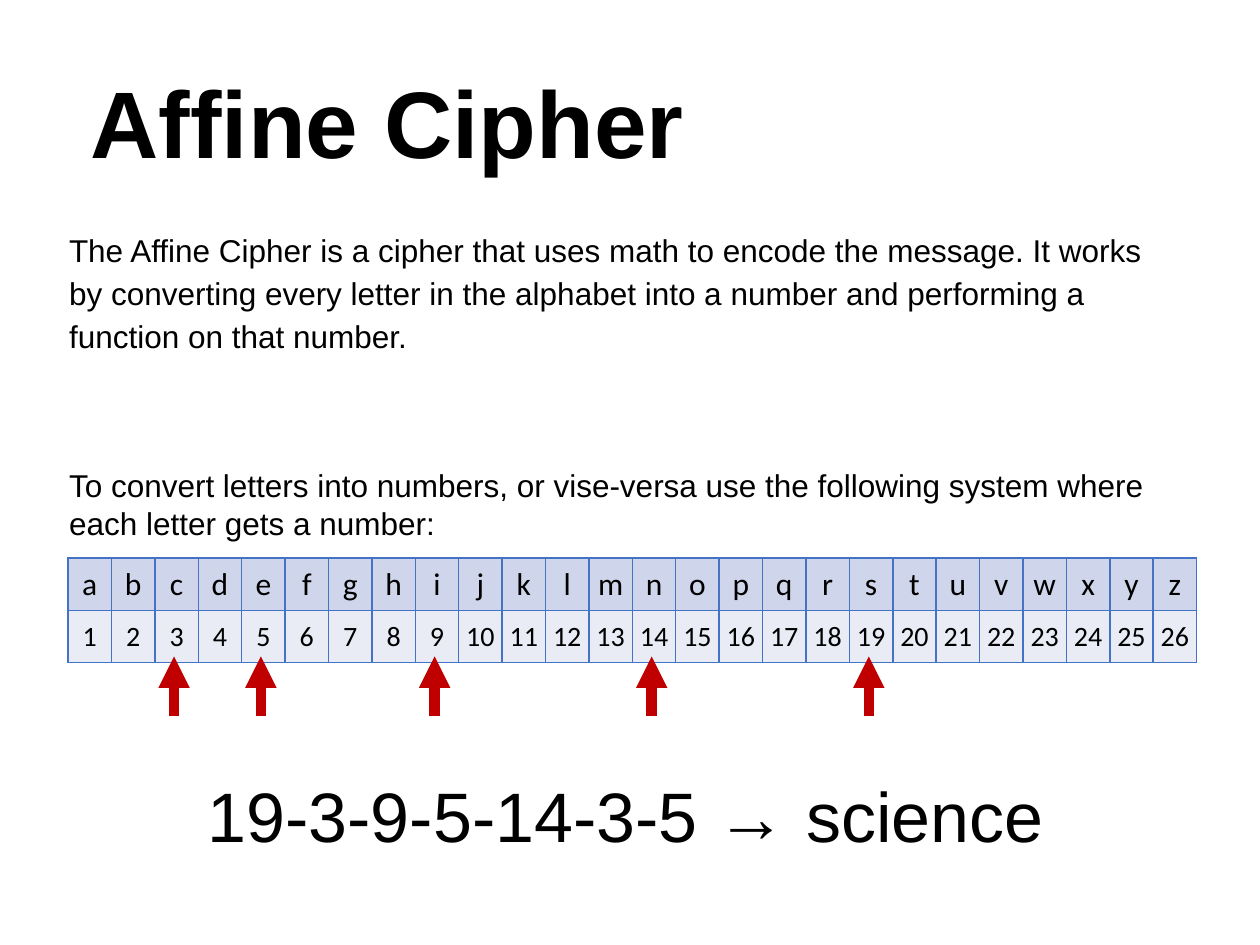
from dataclasses import dataclass

from lxml import etree
from pptx import Presentation
from pptx.dml.color import RGBColor
from pptx.enum.shapes import MSO_CONNECTOR
from pptx.enum.text import MSO_ANCHOR, MSO_AUTO_SIZE, PP_ALIGN
from pptx.oxml.ns import qn
from pptx.util import Inches, Pt

STRAIGHT = MSO_CONNECTOR.STRAIGHT
TOP, MIDDLE = MSO_ANCHOR.TOP, MSO_ANCHOR.MIDDLE
NO_AUTOFIT = MSO_AUTO_SIZE.NONE
LEFT, CENTER = PP_ALIGN.LEFT, PP_ALIGN.CENTER


@dataclass(frozen=True)
class Theme:
    font: str = "Arial"
    table_font: str = "Calibri"
    text: str = "000000"
    border: str = "4472C4"
    letter_fill: str = "CFD5EA"
    number_fill: str = "E9EBF5"
    arrow: str = "C00000"
    title_size: int = 54
    body_size: int = 18
    number_size: int = 16
    example_size: int = 40


T = Theme()


def style(p, size, font=T.font, bold=False, align=LEFT):
    p.alignment = align
    p.font.name = font
    p.font.size = Pt(size)
    p.font.bold = bold
    p.font.color.rgb = RGBColor.from_string(T.text)


def set_borders(cell, color, width):
    tcPr = cell._tc.get_or_add_tcPr()
    for i, side in enumerate(("lnL", "lnR", "lnT", "lnB")):
        ln = etree.Element(qn(f"a:{side}"), w=str(Pt(width)))
        fill = etree.SubElement(ln, qn("a:solidFill"))
        etree.SubElement(fill, qn("a:srgbClr"), val=color)
        tcPr.insert(i, ln)


prs = Presentation()
prs.slide_width, prs.slide_height = Inches(10), Inches(7.5)
s = prs.slides.add_slide(prs.slide_layouts[5])

# Title
title = s.shapes.title
title.left, title.top = Inches(0.62), Inches(0.61)
title.width, title.height = Inches(8.8), Inches(0.74)
tf = title.text_frame
tf.text = "Affine Cipher"
tf.auto_size = NO_AUTOFIT
tf.vertical_anchor = TOP
tf.margin_top = 0
p = tf.paragraphs[0]
style(p, T.title_size, bold=True)
p.line_spacing = 0.9
p.space_before = Pt(10)

# Explanations and worked example: left, top, width, height, size, spacing, wrap, text
texts = [
    (0.45, 1.74, 8.96, 1.11, T.body_size, 1.14, True,
     "The Affine Cipher is a cipher that uses math to encode the message. "
     "It works by converting every letter in the alphabet into a number "
     "and performing a function on that number."),
    (0.45, 3.65, 9.04, 0.71, T.body_size, 1.0, True,
     "To convert letters into numbers, or vise-versa use the following "
     "system where each letter gets a number:"),
    (1.55, 6.08, 6.93, 0.77, T.example_size, 1.0, False,
     "19-3-9-5-14-3-5 → science"),
]
for x, y, w, h, size, spacing, wrap, text in texts:
    tf = s.shapes.add_textbox(Inches(x), Inches(y), Inches(w), Inches(h)).text_frame
    tf.word_wrap = wrap
    tf.text = text
    style(tf.paragraphs[0], size)
    tf.paragraphs[0].line_spacing = spacing

# Letter-to-number table
letters = "abcdefghijklmnopqrstuvwxyz"
table_x, table_y, table_w, table_h = 0.54, 4.43, 8.96, 0.83
col_w = table_w / len(letters)
rows = [
    (letters, T.body_size, T.letter_fill),
    (range(1, len(letters) + 1), T.number_size, T.number_fill),
]
table = s.shapes.add_table(len(rows), len(letters), Inches(table_x), Inches(table_y),
                           Inches(table_w), Inches(table_h)).table
for col in table.columns:
    col.width = Inches(col_w)
for r, (values, size, fill) in enumerate(rows):
    for c, value in enumerate(values):
        cell = table.cell(r, c)
        cell.text = str(value)
        cell.vertical_anchor = MIDDLE
        cell.margin_left = cell.margin_right = cell.margin_top = cell.margin_bottom = 0
        cell.fill.solid()
        cell.fill.fore_color.rgb = RGBColor.from_string(fill)
        set_borders(cell, T.border, 1)
        style(cell.text_frame.paragraphs[0], size, T.table_font, align=CENTER)

# Arrows under the numbers used in the example
for number in (19, 3, 9, 5, 14):
    x = Inches(table_x + (number - 0.5) * col_w - 0.02)
    arrow = s.shapes.add_connector(STRAIGHT, x, Inches(5.68), x, Inches(5.21))
    arrow.line.color.rgb = RGBColor.from_string(T.arrow)
    arrow.line.width = Pt(6)
    etree.SubElement(arrow.line._get_or_add_ln(), qn("a:tailEnd"), type="triangle")
    etree.SubElement(arrow._element.spPr, qn("a:effectLst"))

prs.save("out.pptx")
